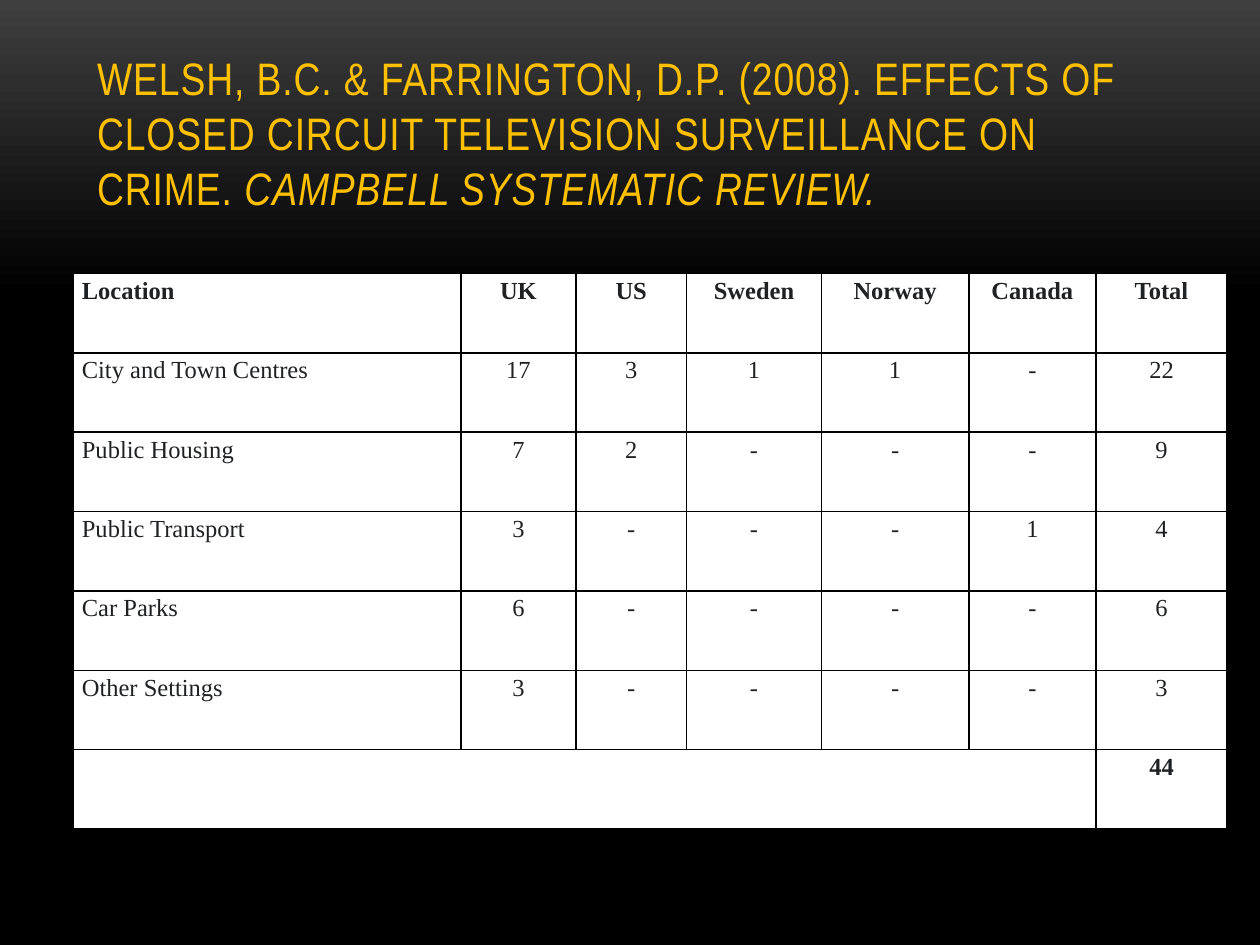
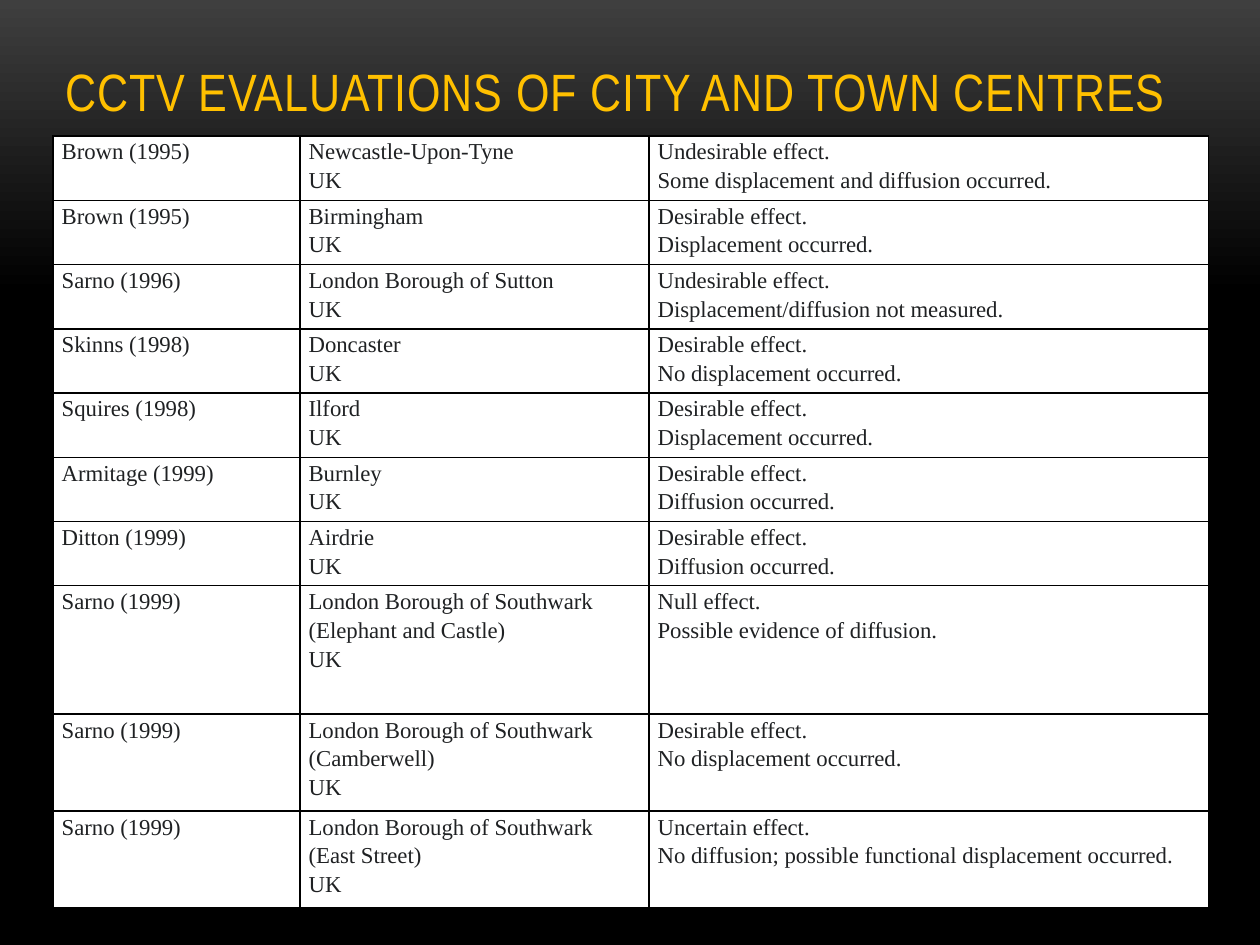
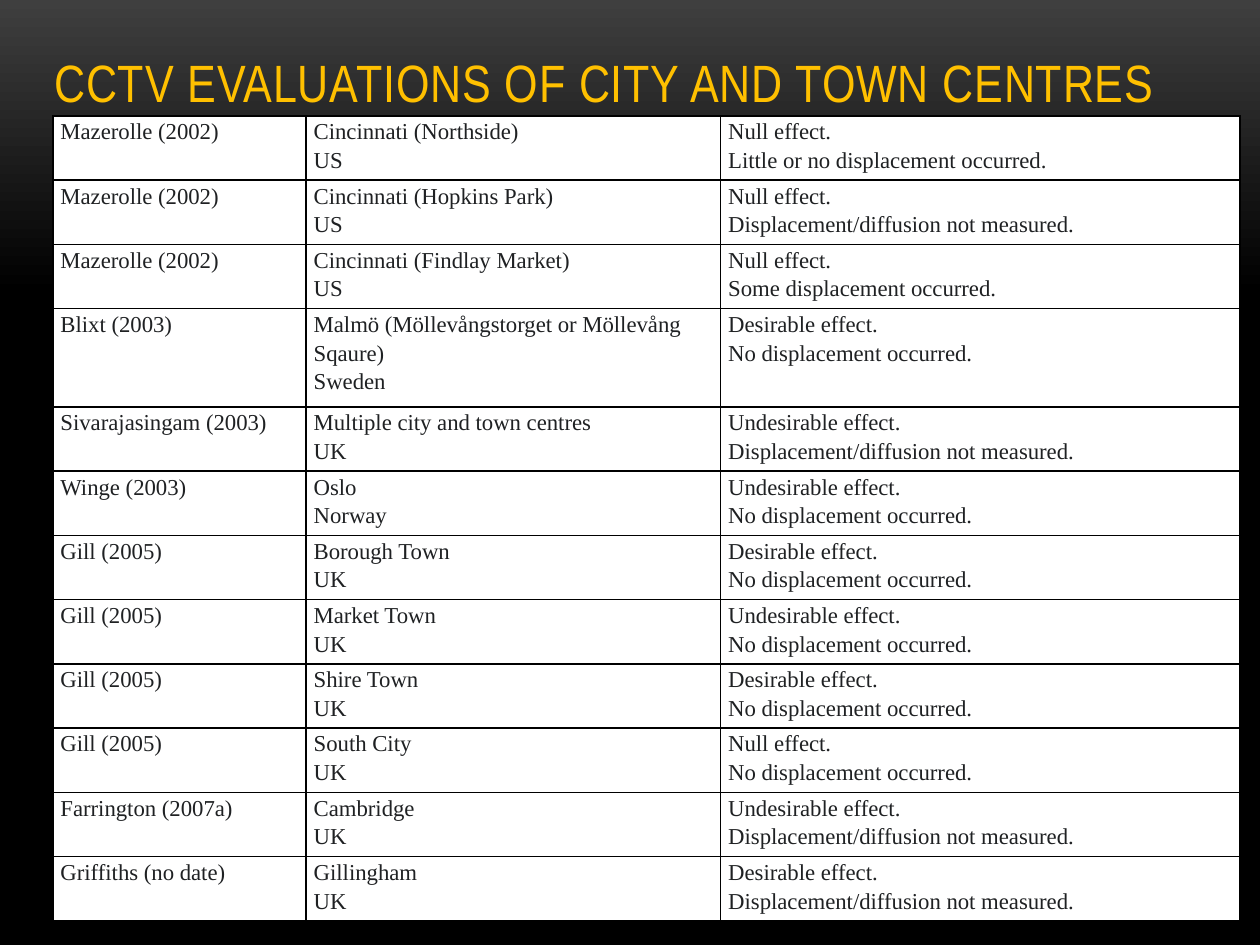
"""Build three slides on evaluations of CCTV and crime."""
from copy import deepcopy
from dataclasses import dataclass

from lxml import etree
from pptx import Presentation
from pptx.dml.color import RGBColor
from pptx.enum.text import MSO_ANCHOR, MSO_AUTO_SIZE, PP_ALIGN
from pptx.oxml.ns import qn
from pptx.util import Pt

EMU_PER_PX = 9144
TITLE_ONLY = 5
LEFT, CENTER, JUSTIFY = PP_ALIGN.LEFT, PP_ALIGN.CENTER, PP_ALIGN.JUSTIFY
BOTTOM = MSO_ANCHOR.BOTTOM
NO_AUTOFIT = MSO_AUTO_SIZE.NONE

GOLD = RGBColor(0xFF, 0xC0, 0x00)
INK = RGBColor(0x1F, 0x21, 0x23)
WHITE = RGBColor(0xFF, 0xFF, 0xFF)
BLACK = RGBColor(0x00, 0x00, 0x00)
CHARCOAL = RGBColor(0x3F, 0x3F, 0x3F)
TITLE_FONT = "Arial Narrow"
TABLE_FONT = "Times New Roman"


@dataclass(frozen=True)
class Box:
    left: int
    top: int
    width: int
    height: int

    def emu(self) -> tuple[int, ...]:
        return tuple(px(n) for n in (self.left, self.top, self.width, self.height))


@dataclass(frozen=True)
class Title:
    box: Box
    size: int
    text: str
    italic_text: str = ""


@dataclass(frozen=True)
class Grid:
    box: Box
    columns: list[int]
    row_heights: list[int]
    rows: list[tuple[str, ...]]
    size: int
    inset: int
    first_align: PP_ALIGN = LEFT
    other_align: PP_ALIGN = LEFT
    bold_rows: tuple[int, ...] = ()


COUNTS = [
    ("Location", "UK", "US", "Sweden", "Norway", "Canada", "Total"),
    ("City and Town Centres", "17", "3", "1", "1", "-", "22"),
    ("Public Housing", "7", "2", "-", "-", "-", "9"),
    ("Public Transport", "3", "-", "-", "-", "1", "4"),
    ("Car Parks", "6", "-", "-", "-", "-", "6"),
    ("Other Settings", "3", "-", "-", "-", "-", "3"),
    ("", "", "", "", "", "", "44"),
]
EARLY_STUDIES = [
    ("Brown (1995)", "Newcastle-Upon-Tyne\nUK",
     "Undesirable effect.\nSome displacement and diffusion occurred."),
    ("Brown (1995)", "Birmingham\nUK", "Desirable effect.\nDisplacement occurred."),
    ("Sarno (1996)", "London Borough of Sutton\nUK",
     "Undesirable effect.\nDisplacement/diffusion not measured."),
    ("Skinns (1998)", "Doncaster\nUK", "Desirable effect.\nNo displacement occurred."),
    ("Squires (1998)", "Ilford\nUK", "Desirable effect.\nDisplacement occurred."),
    ("Armitage (1999)", "Burnley\nUK", "Desirable effect.\nDiffusion occurred."),
    ("Ditton (1999)", "Airdrie\nUK", "Desirable effect.\nDiffusion occurred."),
    ("Sarno (1999)", "London Borough of Southwark (Elephant and Castle)\nUK",
     "Null effect.\nPossible evidence of diffusion."),
    ("Sarno (1999)", "London Borough of Southwark (Camberwell)\nUK",
     "Desirable effect.\nNo displacement occurred."),
    ("Sarno (1999)", "London Borough of Southwark (East Street)\nUK",
     "Uncertain effect.\nNo diffusion; possible functional displacement occurred."),
]
LATER_STUDIES = [
    ("Mazerolle (2002)", "Cincinnati (Northside)\nUS",
     "Null effect.\nLittle or no displacement occurred."),
    ("Mazerolle (2002)", "Cincinnati (Hopkins Park)\nUS",
     "Null effect.\nDisplacement/diffusion not measured."),
    ("Mazerolle (2002)", "Cincinnati (Findlay Market)\nUS",
     "Null effect.\nSome displacement occurred."),
    ("Blixt (2003)", "Malmö (Möllevångstorget or Möllevång Sqaure)\nSweden",
     "Desirable effect.\nNo displacement occurred."),
    ("Sivarajasingam (2003)", "Multiple city and town centres\nUK",
     "Undesirable effect.\nDisplacement/diffusion not measured."),
    ("Winge (2003)", "Oslo\nNorway", "Undesirable effect.\nNo displacement occurred."),
    ("Gill (2005)", "Borough Town\nUK", "Desirable effect.\nNo displacement occurred."),
    ("Gill (2005)", "Market Town\nUK", "Undesirable effect.\nNo displacement occurred."),
    ("Gill (2005)", "Shire Town\nUK", "Desirable effect.\nNo displacement occurred."),
    ("Gill (2005)", "South City\nUK", "Null effect.\nNo displacement occurred."),
    ("Farrington (2007a)", "Cambridge\nUK",
     "Undesirable effect.\nDisplacement/diffusion not measured."),
    ("Griffiths (no date)", "Gillingham\nUK",
     "Desirable effect.\nDisplacement/diffusion not measured."),
]
CENTRES_TITLE = "CCTV EVALUATIONS OF CITY AND TOWN CENTRES"

PAGES = [
    (Title(Box(67, 30, 867, 145), 26,
           "WELSH, B.C. & FARRINGTON, D.P. (2008). EFFECTS OF CLOSED CIRCUIT "
           "TELEVISION SURVEILLANCE ON CRIME. ", "CAMPBELL SYSTEMATIC REVIEW."),
     Grid(Box(58, 217, 917, 442), [308, 91, 88, 107, 117, 101, 104], [63] * 7,
          COUNTS, 14, 7, JUSTIFY, CENTER, (0, 6))),
    (Title(Box(42, 0, 908, 102), 30, CENTRES_TITLE),
     Grid(Box(42, 108, 917, 615), [196, 277, 444], [51] * 7 + [102, 77, 77],
          EARLY_STUDIES, 13, 7)),
    (Title(Box(33, 3, 950, 92), 30, CENTRES_TITLE),
     Grid(Box(42, 92, 942, 642), [201, 329, 412], [51] * 3 + [78] + [51] * 8,
          LATER_STUDIES, 13, 6)),
]


def px(length: int) -> int:
    return length * EMU_PER_PX


def paint_background(master) -> None:
    fill = master.background.fill
    fill.gradient()
    fill.gradient_angle = 270
    top, fade = fill.gradient_stops
    top.color.rgb, top.position = CHARCOAL, 0
    fade.color.rgb, fade.position = BLACK, 0.31
    stops = master.element.find(".//" + qn("p:bgPr")).find(".//" + qn("a:gsLst"))
    end = deepcopy(stops[-1])
    end.set("pos", "100000")
    stops.append(end)


def draw_title(slide, title: Title) -> None:
    heading = slide.shapes.title
    heading.left, heading.top, heading.width, heading.height = title.box.emu()
    frame = heading.text_frame
    frame.auto_size = NO_AUTOFIT
    frame.word_wrap = True
    frame.vertical_anchor = BOTTOM
    line = frame.paragraphs[0]
    line.alignment = LEFT
    line.font.name, line.font.size = TITLE_FONT, Pt(title.size)
    line.font.color.rgb = GOLD
    for text, italic in ((title.text, None), (title.italic_text, True)):
        if text:
            run = line.add_run()
            run.text = text
            run.font.italic = italic
            run._r.get_or_add_rPr().set("spc", "50")


def outline_cell(cell) -> None:
    properties = cell._tc.get_or_add_tcPr()
    for index, side in enumerate(("lnL", "lnR", "lnT", "lnB")):
        border = etree.Element(qn(f"a:{side}"), w=str(Pt(1)))
        solid = etree.SubElement(border, qn("a:solidFill"))
        etree.SubElement(solid, qn("a:srgbClr"), val=str(BLACK))
        properties.insert(index, border)


def fill_cell(cell, text: str, grid: Grid, align: PP_ALIGN, bold: bool) -> None:
    cell.fill.solid()
    cell.fill.fore_color.rgb = WHITE
    cell.margin_left = cell.margin_right = px(grid.inset)
    cell.margin_top = cell.margin_bottom = 0
    outline_cell(cell)
    if not text:
        return
    cell.text = text
    for line in cell.text_frame.paragraphs:
        line.alignment = align
        line.line_spacing = 1.15
        line.font.name, line.font.size = TABLE_FONT, Pt(grid.size)
        line.font.bold = bold
        line.font.color.rgb = INK


def draw_table(slide, grid: Grid):
    table = slide.shapes.add_table(len(grid.rows), len(grid.columns), *grid.box.emu()).table
    table.first_row = table.horz_banding = False
    for column, width in zip(table.columns, grid.columns):
        column.width = px(width)
    for row, height in zip(table.rows, grid.row_heights):
        row.height = px(height)
    for r, texts in enumerate(grid.rows):
        for c, text in enumerate(texts):
            align = grid.other_align if c else grid.first_align
            fill_cell(table.cell(r, c), text, grid, align, r in grid.bold_rows)
    return table


def main() -> None:
    deck = Presentation()
    deck.slide_width, deck.slide_height = px(1000), px(750)
    paint_background(deck.slide_master)
    for title, grid in PAGES:
        slide = deck.slides.add_slide(deck.slide_layouts[TITLE_ONLY])
        draw_title(slide, title)
        table = draw_table(slide, grid)
        if grid.rows is COUNTS:
            table.cell(6, 0).merge(table.cell(6, 5))
    deck.save("out.pptx")


if __name__ == "__main__":
    main()
